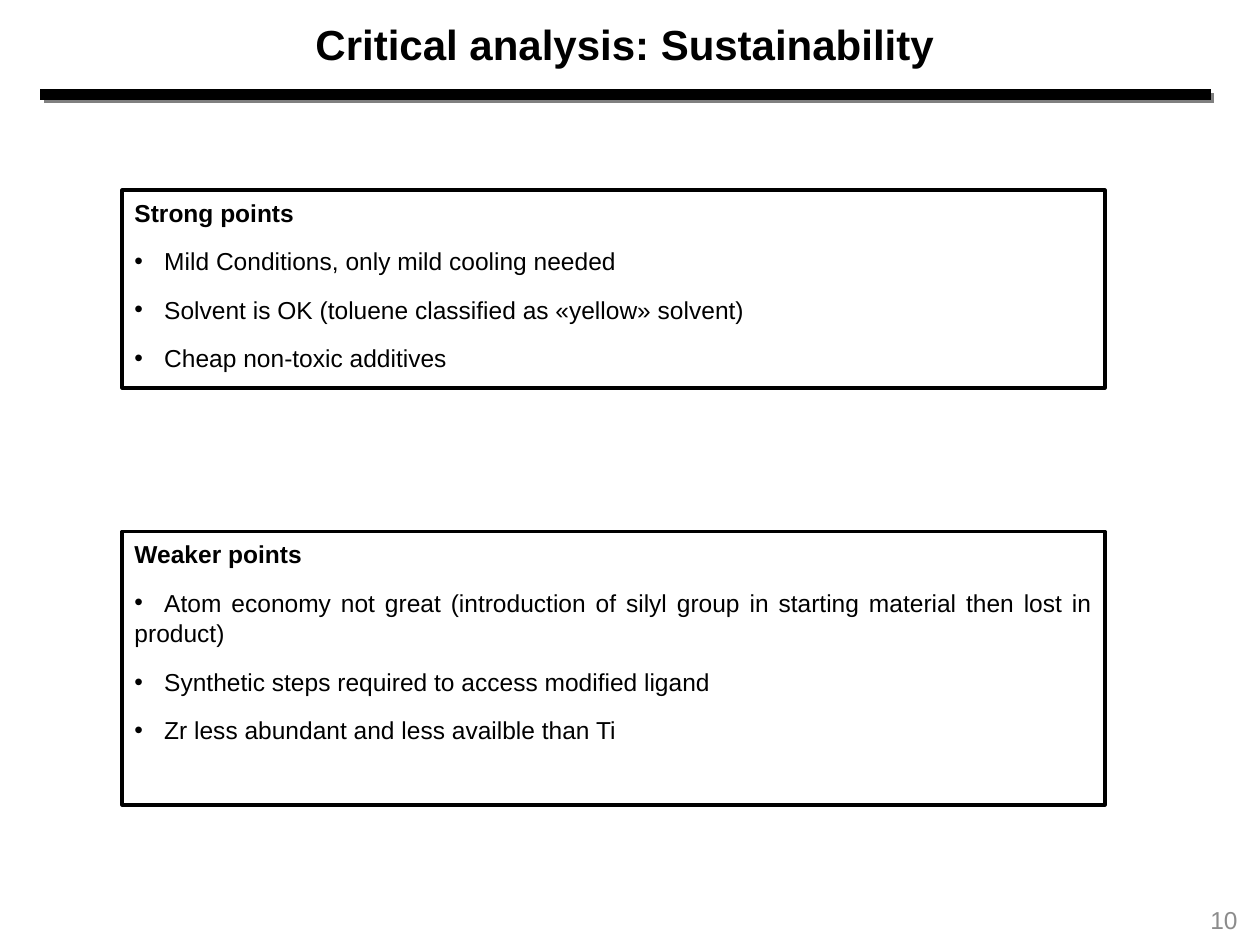
"""Build the sustainability analysis slide with its strong and weaker points."""
from dataclasses import dataclass

from lxml.etree import SubElement as Sub
from pptx import Presentation
from pptx.dml.color import RGBColor
from pptx.enum.shapes import MSO_CONNECTOR as Conn, MSO_SHAPE as Kind
from pptx.enum.text import MSO_ANCHOR as Anchor, PP_ALIGN as Align
from pptx.oxml.ns import qn
from pptx.util import Pt

BLACK = "000000"
GREY = "8C8C8C"


@dataclass
class Panel:
    head: str
    items: list[str]
    top: float
    height: float


PANELS = [
    Panel("Strong points", [
        "Mild Conditions, only mild cooling needed",
        "Solvent is OK (toluene classified as «yellow» solvent)",
        "Cheap non-toxic additives",
    ], 108.7, 113),
    Panel("Weaker points", [
        "Atom economy not great (introduction of silyl group in starting "
        "material then lost in product)",
        "Synthetic steps required to access modified ligand",
        "Zr less abundant and less availble than Ti",
    ], 303.8, 156.2),
]


def color(code: str) -> RGBColor:
    return RGBColor.from_string(code)


def write(para, text: str, size: float = 14, bold: bool = False,
          tint: str = BLACK, align=Align.LEFT) -> None:
    para.alignment = align
    run = para.add_run()
    run.text = text
    font = run.font
    font.name, font.size, font.bold = "Arial", Pt(size), bold
    font.color.rgb = color(tint)


def place(shape, left: float, top: float, width: float, height: float) -> None:
    shape.left, shape.top = Pt(left), Pt(top)
    shape.width, shape.height = Pt(width), Pt(height)


def add_bullet(para) -> None:
    props = para._p.get_or_add_pPr()
    props.set("marL", "0")
    props.set("indent", "0")
    Sub(props, qn("a:buFont"), typeface="Arial")
    Sub(props, qn("a:buChar"), char="•")
    tabs = Sub(props, qn("a:tabLst"))
    Sub(tabs, qn("a:tab"), pos=str(Pt(17)), algn="l")


def draw_panel(slide, panel: Panel) -> None:
    box = slide.shapes.add_shape(
        Kind.RECTANGLE, Pt(69.8), Pt(panel.top), Pt(561.6), Pt(panel.height))
    box.shadow.inherit = False
    box.fill.background()
    box.line.color.rgb = color(BLACK)
    box.line.width = Pt(2)
    frame = box.text_frame
    frame.word_wrap = True
    frame.vertical_anchor = Anchor.TOP
    for row, text in enumerate([panel.head, *panel.items]):
        para = frame.add_paragraph() if row else frame.paragraphs[0]
        para.space_before = Pt(10)
        para.line_spacing = 1.05
        if row:
            add_bullet(para)
            text = "\t" + text
        write(para, text, bold=not row, align=Align.JUSTIFY)


def draw_rule(slide) -> None:
    rule = slide.shapes.add_connector(
        Conn.STRAIGHT, Pt(23), Pt(54), Pt(692), Pt(54))
    rule.line.color.rgb = color(BLACK)
    rule.line.width = Pt(6)
    effects = Sub(rule._element.spPr, qn("a:effectLst"))
    shadow = Sub(effects, qn("a:outerShdw"), dist=str(Pt(2.8)), dir="2700000",
                 algn="ctr", rotWithShape="0")
    Sub(shadow, qn("a:srgbClr"), val="808080")


def main() -> None:
    deck = Presentation()
    deck.slide_width, deck.slide_height = Pt(720), Pt(540)
    slide = deck.slides.add_slide(deck.slide_layouts[5])

    title = slide.shapes.title
    place(title, 33, 3.6, 648, 43.2)
    title.text_frame.vertical_anchor = Anchor.MIDDLE
    write(title.text_frame.paragraphs[0], "Critical analysis: Sustainability",
          size=24, bold=True, align=Align.CENTER)

    draw_rule(slide)

    page = slide.shapes.add_textbox(Pt(546.5), Pt(511.2), Pt(167.8), Pt(28.8))
    page.text_frame.word_wrap = True
    page.text_frame.vertical_anchor = Anchor.MIDDLE
    write(page.text_frame.paragraphs[0], "10", tint=GREY, align=Align.RIGHT)

    for panel in PANELS:
        draw_panel(slide, panel)
    deck.save("out.pptx")


if __name__ == "__main__":
    main()
